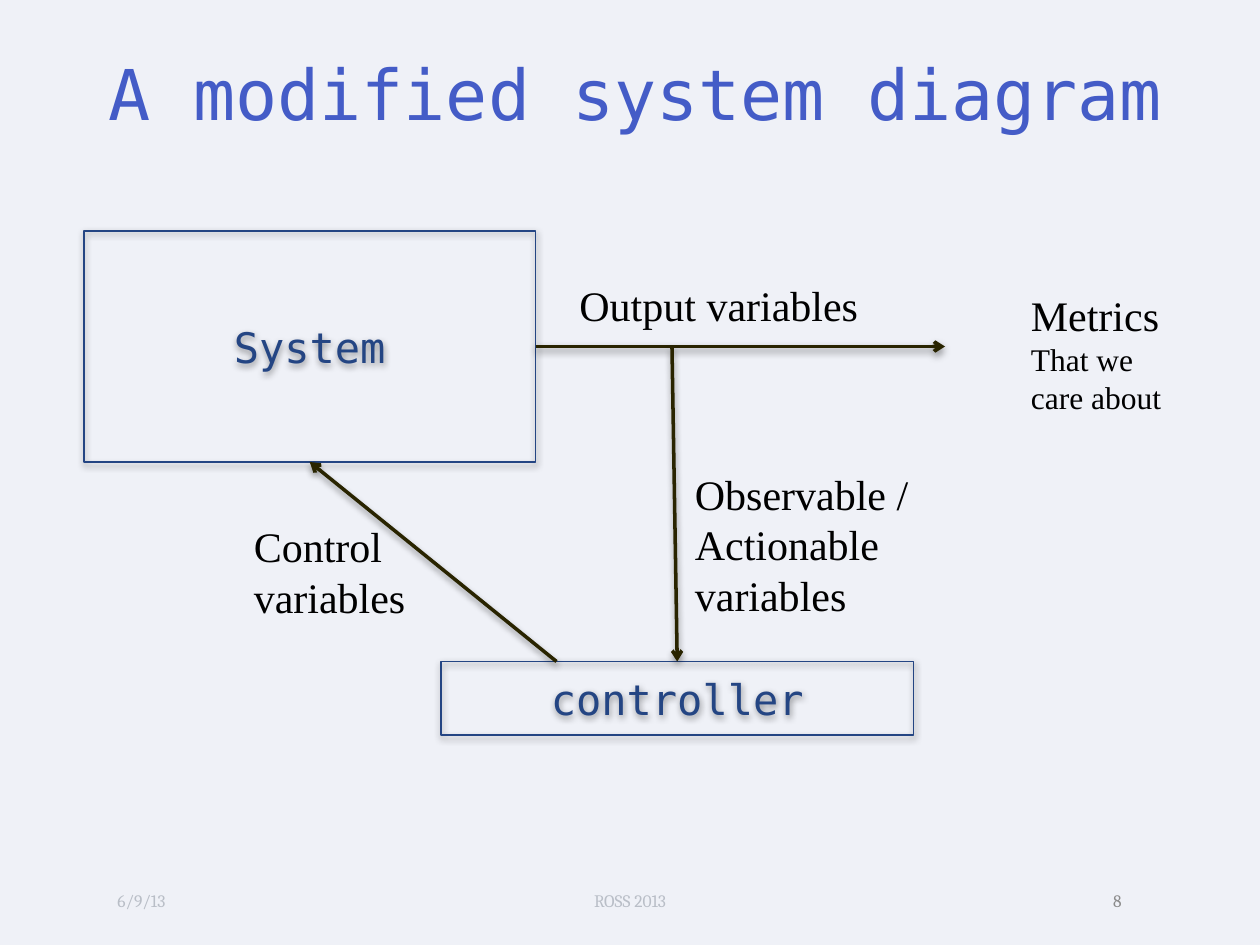
from lxml import etree
from pptx import Presentation, util as u
from pptx.dml.color import RGBColor
from pptx.enum import shapes, text
from pptx.oxml.ns import qn

THEME = {
    "paper": "EFF1F7", "title": "445CC7", "box": "244583", "arrow": "292400",
    "ink": "000000", "footer": "B9BEC7", "number": "8C8C8C",
    "mono": "DejaVu Sans Mono", "serif": "Times New Roman", "small": "Cambria",
    "title_size": 40, "label_size": 24, "note_size": 18, "footer_size": 10,
}
LEFT, CENTER, RIGHT = text.PP_ALIGN.LEFT, text.PP_ALIGN.CENTER, text.PP_ALIGN.RIGHT
TOP, MIDDLE = text.MSO_ANCHOR.TOP, text.MSO_ANCHOR.MIDDLE
COLUMNS = 120


def write(box, words, font="serif", sizes=("label_size",), color="ink", align=LEFT, anchor=TOP):
    frame = box.text_frame
    frame.word_wrap = True
    frame.auto_size = text.MSO_AUTO_SIZE.NONE
    frame.vertical_anchor = anchor
    frame.text = words
    for para, size in zip(frame.paragraphs, sizes):
        para.alignment = align
        span = para.runs[0]
        span.font.name = THEME[font]
        span.font.size = u.Pt(THEME[size])
        span.font.color.rgb = RGBColor.from_string(THEME[color])


def outline(item, color, width, distance, opacity):
    item.line.color.rgb = RGBColor.from_string(THEME[color])
    item.line.width = u.Pt(width)
    effects = etree.SubElement(item._element.spPr, qn("a:effectLst"))
    shadow = etree.SubElement(effects, qn("a:outerShdw"), blurRad=str(u.Pt(4)),
                              dist=str(u.Pt(distance)), dir="5400000", rotWithShape="0")
    tint = etree.SubElement(shadow, qn("a:srgbClr"), val=THEME["ink"])
    etree.SubElement(tint, qn("a:alpha"), val=str(opacity * 1000))


deck = Presentation()
deck.slide_width, deck.slide_height = u.Inches(10), u.Inches(7.5)
cell = deck.slide_width // COLUMNS
page = deck.slides.add_slide(deck.slide_layouts[5])
page.background.fill.solid()
page.background.fill.fore_color.rgb = RGBColor.from_string(THEME["paper"])

title = page.shapes.title
title.left, title.top, title.width, title.height = [int(cell * n) for n in (6, 3.6, 109, 10.4)]
write(title, "A modified system diagram", font="mono", sizes=["title_size"],
      color="title", align=CENTER, anchor=MIDDLE)

for words, column, width, align, color in [
    ("6/9/13", 10, 24, LEFT, "footer"),
    ("ROSS 2013", 41, 38, CENTER, "footer"),
    ("8", 86, 22, RIGHT, "number"),
]:
    box = page.shapes.add_textbox(*[int(cell * n) for n in (column, 83.4, width, 4.8)])
    write(box, words, font="small", sizes=["footer_size"], color=color, align=align, anchor=MIDDLE)

blocks = {}
for words, place in [("System", (8, 22, 43, 22)), ("controller", (42, 63, 45, 7))]:
    block = page.shapes.add_shape(shapes.MSO_SHAPE.RECTANGLE, *[cell * n for n in place])
    block.fill.background()
    outline(block, "box", width=1, distance=1.6, opacity=42)
    write(block, words, font="mono", color="box", align=CENTER, anchor=MIDDLE)
    blocks[words] = block

system, controller = blocks["System"], blocks["controller"]
for ends, source, target in [
    ((51, 33, 90, 33), (system, 3), None),
    ((64, 33, 64.5, 63), None, (controller, 0)),
    ((53, 63, 29.5, 44), None, (system, 2)),
]:
    arrow = page.shapes.add_connector(shapes.MSO_CONNECTOR.STRAIGHT, *[int(cell * n) for n in ends])
    if source:
        arrow.begin_connect(*source)
    if target:
        arrow.end_connect(*target)
    outline(arrow, "arrow", width=2, distance=2, opacity=40)
    etree.SubElement(arrow.line._get_or_add_ln(), qn("a:tailEnd"), type="arrow")

for words, place in [
    ("Output variables", (54, 26, 30, 6)),
    ("Observable / Actionable variables", (65, 44, 26, 15.7)),
    ("Control variables", (23, 49, 19, 10.9)),
    ("Metrics\nThat we care about", (97, 27, 16, 13.3)),
]:
    label = page.shapes.add_textbox(*[int(cell * n) for n in place])
    write(label, words, sizes=("label_size", "note_size"))

deck.save("out.pptx")
